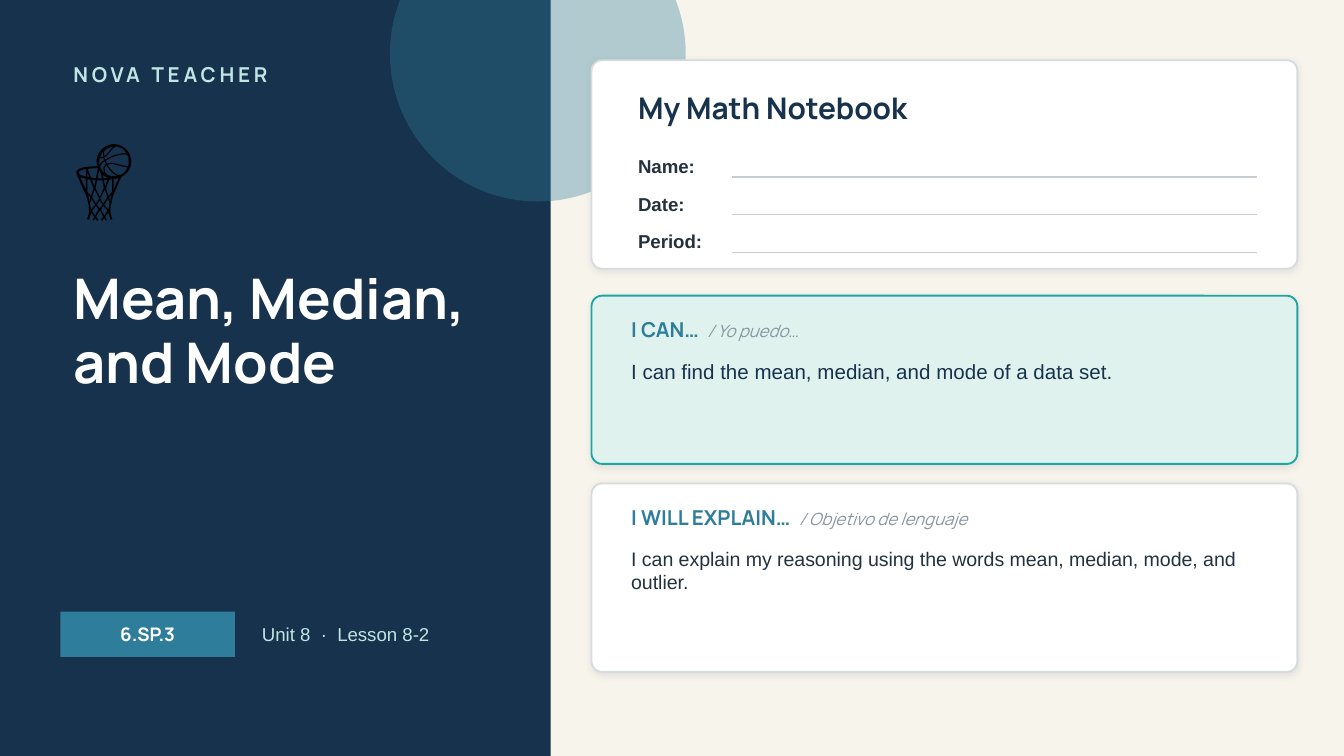
from lxml import etree
from pptx import Presentation
from pptx.dml.color import RGBColor
from pptx.enum import shapes, text
from pptx.oxml import parse_xml
from pptx.oxml.ns import nsdecls, qn
from pptx.util import Cm, Pt

NAVY = RGBColor(0x17, 0x32, 0x4D)
BLUE = RGBColor(0x2E, 0x7D, 0x9A)
TEAL = RGBColor(0x1F, 0xA6, 0xA2)
MINT = RGBColor(0xBF, 0xE6, 0xE2)
PALE_MINT = RGBColor(0xDF, 0xF2, 0xEE)
CREAM = RGBColor(0xF7, 0xF4, 0xEC)
WHITE = RGBColor(0xFF, 0xFF, 0xFF)
BLACK = RGBColor(0x00, 0x00, 0x00)
INK = RGBColor(0x24, 0x32, 0x3F)
GRAY = RGBColor(0x8A, 0x96, 0xA3)
BORDER = RGBColor(0xD6, 0xDB, 0xDF)
RULE = RGBColor(0xC7, 0xCD, 0xD2)

BRAND = "NOVA TEACHER"
ICON = "🏀"
TITLE = "Mean, Median, and Mode"
STANDARD = "6.SP.3"
LESSON = "Unit 8  ·  Lesson 8-2"
NOTEBOOK = "My Math Notebook"
FIELDS = ["Name:", "Date:", "Period:"]
GOALS = [
    dict(top=5.59, height=3.18, fill=PALE_MINT, border=TEAL,
         heading="I CAN…  ", translation="/ Yo puedo…",
         body="I can find the mean, median, and mode of a data set.",
         size=11, color=NAVY),
    dict(top=9.14, height=3.56, fill=WHITE, border=BORDER,
         heading="I WILL EXPLAIN…  ", translation="/ Objetivo de lenguaje",
         body="I can explain my reasoning using the words mean, median, mode, and outlier.",
         size=10.5, color=INK),
]

MARGIN = 1.14
CARD_LEFT, CARD_WIDTH, CARD_RADIUS = 11.18, 13.34, 0.2
FORM_LEFT, FIELD_TOP, FIELD_PITCH = 11.81, 2.84, 0.71
RULE_LEFT, RULE_RIGHT, RULE_DROP = 13.84, 23.75, 0.51
GOAL_LEFT, GOAL_WIDTH = 11.68, 12.32

presentation = Presentation()
presentation.slide_width, presentation.slide_height = Cm(25.4), Cm(14.29)
slide = presentation.slides.add_slide(presentation.slide_layouts[6])
slide.background.fill.solid()
slide.background.fill.fore_color.rgb = CREAM


def add_box(kind, left, top, width, height, fill):
    shape = slide.shapes.add_shape(kind, Cm(left), Cm(top), Cm(width), Cm(height))
    shape.shadow.inherit = False
    shape.fill.solid()
    shape.fill.fore_color.rgb = fill
    shape.line.fill.background()
    return shape


def format_run(run, size, color, font="Arial", bold=False, italic=False):
    run.font.size = Pt(size)
    run.font.color.rgb = color
    run.font.name = font
    run.font.bold = bold
    run.font.italic = italic


def add_text(left, top, width, height, words, size, color, font="Arial", bold=False, middle=True):
    shape = slide.shapes.add_textbox(Cm(left), Cm(top), Cm(width), Cm(height))
    frame = shape.text_frame
    frame.word_wrap = True
    frame.vertical_anchor = text.MSO_ANCHOR.MIDDLE if middle else text.MSO_ANCHOR.TOP
    frame.text = words
    paragraph = frame.paragraphs[0]
    format_run(paragraph.runs[0], size, color, font, bold)
    return paragraph


def add_card(top, height, fill, border):
    card = add_box(shapes.MSO_SHAPE.ROUNDED_RECTANGLE, CARD_LEFT, top, CARD_WIDTH, height, fill)
    card.adjustments[0] = CARD_RADIUS / height
    card.line.color.rgb = border
    card.line.width = Pt(1)
    effects = card._element.spPr.find(qn("a:effectLst"))
    effects.append(parse_xml(
        f'<a:outerShdw {nsdecls("a")} blurRad="{Pt(4)}" dist="{Pt(1)}" dir="5400000" '
        'algn="bl" rotWithShape="0"><a:srgbClr val="1C2E42"><a:alpha val="10000"/>'
        '</a:srgbClr></a:outerShdw>'))


add_box(shapes.MSO_SHAPE.RECTANGLE, 0, 0, 10.41, 14.29, NAVY)
circle = add_box(shapes.MSO_SHAPE.OVAL, 7.37, -1.78, 5.59, 5.59, BLUE)
circle_color = circle._element.spPr.find(qn("a:solidFill"))[0]
etree.SubElement(circle_color, qn("a:alpha")).set("val", "35000")

brand = add_text(MARGIN, 1.02, 8.38, 0.76, BRAND, 11, MINT, "Manrope", True)
brand.runs[0]._r.get_or_add_rPr().set("spc", "200")
add_text(MARGIN, 2.16, 3.81, 2.29, ICON, 44, BLACK, "Calibri")
title = add_text(MARGIN, 4.95, 8.38, 4.32, TITLE, 30, WHITE, "Manrope", True, middle=False)
title.line_spacing = 0.95

badge = add_box(shapes.MSO_SHAPE.RECTANGLE, MARGIN, 11.56, 3.3, 0.86, BLUE)
badge.text_frame.text = STANDARD
badge.text_frame.vertical_anchor = text.MSO_ANCHOR.MIDDLE
badge.text_frame.paragraphs[0].alignment = text.PP_ALIGN.CENTER
format_run(badge.text_frame.paragraphs[0].runs[0], 10, WHITE, "Manrope", True)
add_text(4.7, 11.56, 5.33, 0.86, LESSON, 10, MINT)

add_card(MARGIN, 3.94, WHITE, BORDER)
add_text(FORM_LEFT, 1.52, 12.19, 1.02, NOTEBOOK, 16, NAVY, "Manrope", True)
for index, field in enumerate(FIELDS):
    top = FIELD_TOP + index * FIELD_PITCH
    add_text(FORM_LEFT, top, 2.03, 0.61, field, 10, INK, bold=True)
    rule_top = Cm(top + RULE_DROP)
    rule = slide.shapes.add_connector(
        shapes.MSO_CONNECTOR.STRAIGHT, Cm(RULE_LEFT), rule_top, Cm(RULE_RIGHT), rule_top)
    rule.line.color.rgb = RULE
    rule.line.width = Pt(0.75)
    etree.SubElement(rule._element.spPr, qn("a:effectLst"))

for goal in GOALS:
    top, height = goal["top"], goal["height"]
    add_card(top, height, goal["fill"], goal["border"])
    heading = add_text(GOAL_LEFT, top + 0.25, GOAL_WIDTH, 0.76, goal["heading"],
                       11, BLUE, "Manrope", True)
    translation = heading.add_run()
    translation.text = goal["translation"]
    format_run(translation, 9, GRAY, "Manrope", italic=True)
    add_text(GOAL_LEFT, top + 1.07, GOAL_WIDTH, height - 1.2, goal["body"],
             goal["size"], goal["color"], middle=False)

presentation.save("out.pptx")
